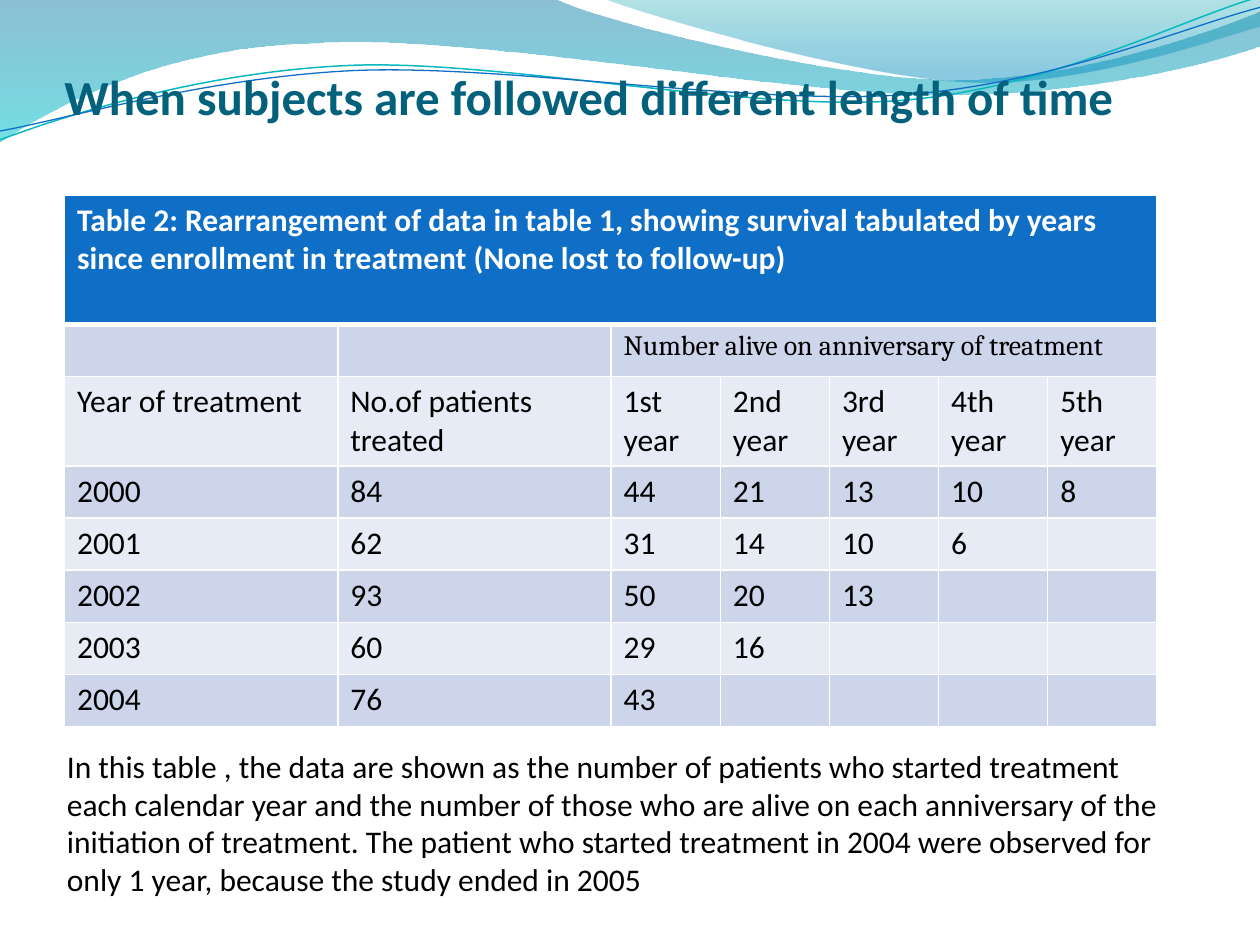
from math import cos, radians, sin

from lxml.etree import SubElement
from pptx import Presentation
from pptx.dml.color import RGBColor
from pptx.enum.text import MSO_ANCHOR, PP_ALIGN
from pptx.oxml import parse_xml
from pptx.oxml.ns import nsdecls, qn
from pptx.util import Cm, Pt

TITLE = "When subjects are followed different length of time"
CAPTION = ("Table 2: Rearrangement of data in table 1, showing survival tabulated "
           "by years since enrollment in treatment (None lost to follow-up)")
GROUP_HEADING = "Number alive on anniversary of treatment"
HEADINGS = ["Year of treatment", "No.of patients treated",
            "1st year", "2nd year", "3rd year", "4th year", "5th year"]
SURVIVAL = [
    (2000, 84, 44, 21, 13, 10, 8),
    (2001, 62, 31, 14, 10, 6),
    (2002, 93, 50, 20, 13),
    (2003, 60, 29, 16),
    (2004, 76, 43),
]
NOTE = [
    "In this table , the data are shown as the number of patients who started treatment",
    "each calendar year and the number of those who are alive on each anniversary of the",
    "initiation of treatment. The patient who started treatment in 2004 were observed for",
    "only 1 year, because the study ended in 2005",
]
COLUMN_WIDTHS = [5.51] * 2 + [2.2] * 5
ROW_HEIGHTS = [2.61] + [1.05] * 7
BLUE, WHITE, BLACK, TEAL = "0F6FC6", "FFFFFF", "000000", "04617B"
BANDS = ["E7EBF5", "CCD5EA"]

# Outlines in cm: a pair is a straight step, a triple of pairs is a Bezier curve.
# Gradient stops are position, colour and opacity in percent.
WAVES = [
    ([(0, 0), (11.18, -0.03),
      ((12.09, 0.43), (16.87, 1.6), (19.25, 1.6)),
      ((21.67, 1.6), (24.33, 0.66), (25.4, 0.23)), (25.43, 0.91),
      ((24.97, 1.12), (22.1, 1.93), (18.95, 1.91)),
      ((15.8, 1.91), (9.7, 0.71), (6.53, 0.86)),
      ((3.28, 0.91), (1.17, 2.11), (-0.03, 2.87)), (0, 0)],
     [(0, "0074A1", 45), (100, "00C6CF", 55)]),
    ([(12.17, -0.03),
      ((12.93, 0.28), (17.32, 1.57), (19.53, 1.65)),
      ((21.74, 1.75), (24.41, 0.81), (25.4, 0.53)), (25.4, 0), (12.17, -0.03)],
     [(0, "00A1A9", 30), (80, "008BBF", 45)]),
]
RIPPLES = [
    ([(0, 2.82),
      ((1.22, 2.36), (4.01, 1.45), (7.04, 1.32)),
      ((10.03, 1.19), (15.06, 2.26), (18.11, 2.03)),
      ((21.16, 1.8), (23.83, 0.38), (25.35, -0.05))], "0AB8BF", 0.85),
    ([(0, 2.64),
      ((1.19, 2.44), (4.17, 1.55), (7.19, 1.42)),
      ((10.24, 1.3), (15.16, 2.13), (18.21, 1.91)),
      ((21.23, 1.7), (23.9, 0.53), (25.4, 0.15))], BLUE, 0.75),
]
RIPPLE_TILT = -2.7
RIPPLE_CENTRE = (12.68, 1.48)


def rgb(code):
    return RGBColor.from_string(code)


def untilt(point):
    """Turn a point level again, so that the tilt of its shape brings it back."""
    dx, dy = (value - centre for value, centre in zip(point, RIPPLE_CENTRE))
    angle = radians(-RIPPLE_TILT)
    return (RIPPLE_CENTRE[0] + dx * cos(angle) - dy * sin(angle),
            RIPPLE_CENTRE[1] + dx * sin(angle) + dy * cos(angle))


def add_outline(page, outline, close, place=lambda point: point):
    """Draw all points as straight steps, then join each triple into a Bezier curve."""
    steps = [part if len(part) == 3 else (part,) for part in outline]
    start, *rest = [tuple(Cm(value) for value in place(point))
                    for step in steps for point in step]
    builder = page.shapes.build_freeform(*start)
    builder.add_line_segments(rest, close=close)
    shape = builder.convert_to_shape()
    shape.shadow.inherit = False
    lines = iter(list(shape.element.spPr.iter(qn("a:lnTo"))))
    for step in steps[1:]:
        first, *others = [next(lines) for _ in step]
        if others:
            first.tag = qn("a:cubicBezTo")
            for line in others:
                first.append(line[0])
                line.getparent().remove(line)
    return shape


def add_wave(page, outline, stops):
    wave = add_outline(page, outline, close=True)
    wave.line.fill.background()
    wave.fill.gradient()
    wave.fill.gradient_angle = 270
    for stop, (position, code, _) in zip(wave.fill.gradient_stops, stops):
        stop.position = position / 100
        stop.color.rgb = rgb(code)
    colours = wave.element.spPr.iter(qn("a:srgbClr"))
    for colour, (_, _, opacity) in zip(colours, stops):
        SubElement(colour, qn("a:alpha"), val=str(opacity * 1000))


def add_ripple(page, outline, code, width):
    ripple = add_outline(page, outline, close=False, place=untilt)
    ripple.rotation = RIPPLE_TILT
    ripple.fill.background()
    ripple.line.color.rgb = rgb(code)
    ripple.line.width = Pt(width)


def format_text(frame, size, code, bold=False, font="Calibri"):
    for para in frame.paragraphs:
        for span in para.runs:
            span.font.size = Pt(size)
            span.font.name = font
            span.font.bold = bold
            span.font.color.rgb = rgb(code)


def set_borders(cell, top=1, bottom=1):
    properties = cell._tc.get_or_add_tcPr()
    for index, (side, width) in enumerate(zip("LRTB", (1, 1, top, bottom))):
        properties.insert(index, parse_xml(
            f'<a:ln{side} {nsdecls("a")} w="{Pt(width)}"><a:solidFill>'
            f'<a:srgbClr val="{WHITE}"/></a:solidFill></a:ln{side}>'))


def add_survival_table(page):
    rows = [[CAPTION], ["", "", GROUP_HEADING], HEADINGS, *SURVIVAL]
    table = page.shapes.add_table(
        len(ROW_HEIGHTS), len(COLUMN_WIDTHS), Cm(1.3), Cm(3.93),
        Cm(sum(COLUMN_WIDTHS)), Cm(sum(ROW_HEIGHTS))).table
    table.first_row = table.horz_banding = False
    for column, width in zip(table.columns, COLUMN_WIDTHS):
        column.width = Cm(width)
    for row, height in zip(table.rows, ROW_HEIGHTS):
        row.height = Cm(height)
    table.cell(0, 0).merge(table.cell(0, 6))
    table.cell(1, 2).merge(table.cell(1, 6))

    for r, row in enumerate(table.rows):
        for c, cell in enumerate(row.cells):
            if c < len(rows[r]) and rows[r][c] != "":
                cell.text_frame.text = str(rows[r][c])
            cell.fill.solid()
            cell.fill.fore_color.rgb = rgb(BANDS[r % 2] if r else BLUE)
            set_borders(cell, top=3 if r == 1 else 1, bottom=1 if r else 3)
            if r == 0:
                format_text(cell.text_frame, 18, WHITE, bold=True)
            elif r == 1:
                format_text(cell.text_frame, 16, BLACK, font="Cambria")
            else:
                format_text(cell.text_frame, 18, BLACK)


def place_title(page):
    title = page.shapes.title
    title.left, title.top, title.width, title.height = Cm(1.3), Cm(0.73), Cm(22.86), Cm(1.79)
    frame = title.text_frame
    frame.text = TITLE
    frame.vertical_anchor = MSO_ANCHOR.BOTTOM
    frame.margin_left = frame.margin_right = frame.margin_bottom = 0
    frame.paragraphs[0].alignment = PP_ALIGN.LEFT
    format_text(frame, 28, TEAL, bold=True)
    title.element.getparent().append(title.element)  # in front of the waves


def add_note(page):
    box = page.shapes.add_textbox(Cm(1.1), Cm(14.93), Cm(22.76), Cm(3.33))
    box.text_frame.word_wrap = False
    box.text_frame.text = "\n".join(NOTE)
    format_text(box.text_frame, 18, BLACK)


def main():
    deck = Presentation()
    deck.slide_width, deck.slide_height = Cm(25.4), Cm(19.05)
    page = deck.slides.add_slide(deck.slide_layouts.get_by_name("Title Only"))
    for wave in WAVES:
        add_wave(page, *wave)
    for ripple in RIPPLES:
        add_ripple(page, *ripple)
    place_title(page)
    add_survival_table(page)
    add_note(page)
    deck.save("out.pptx")


if __name__ == "__main__":
    main()
